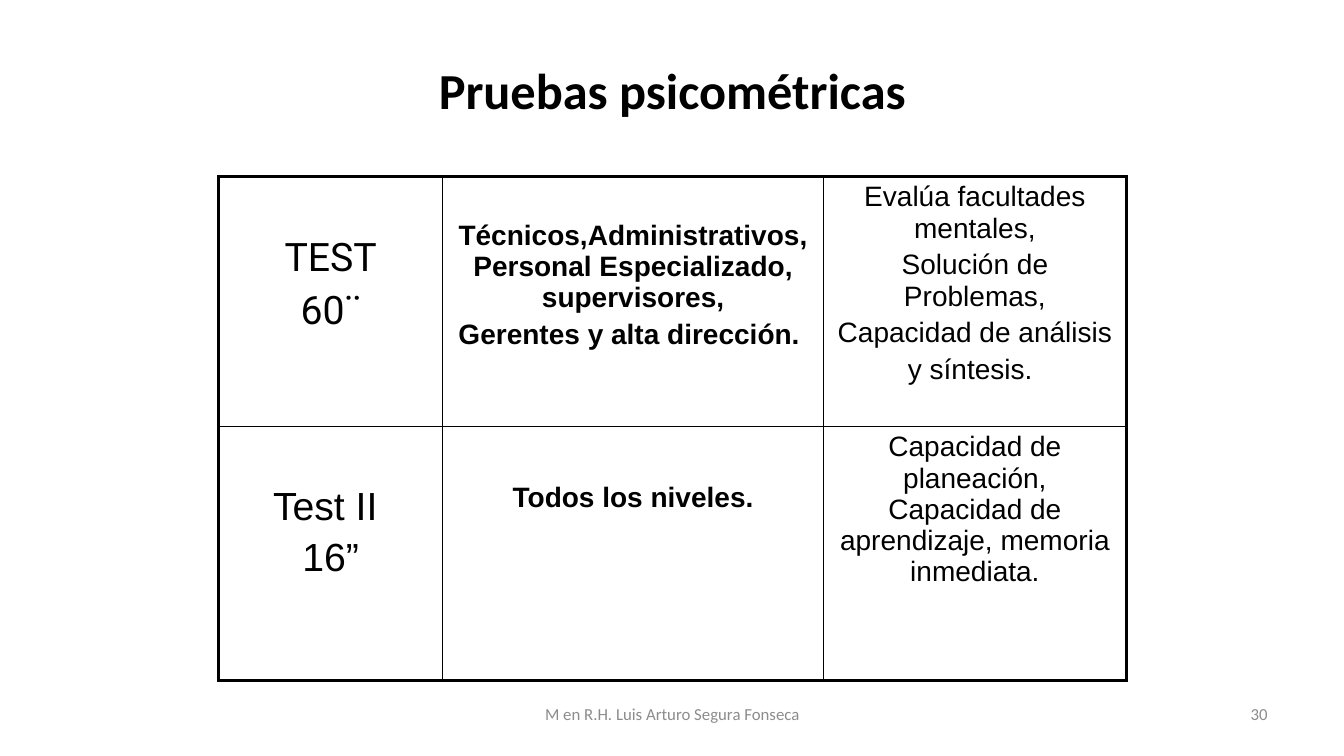
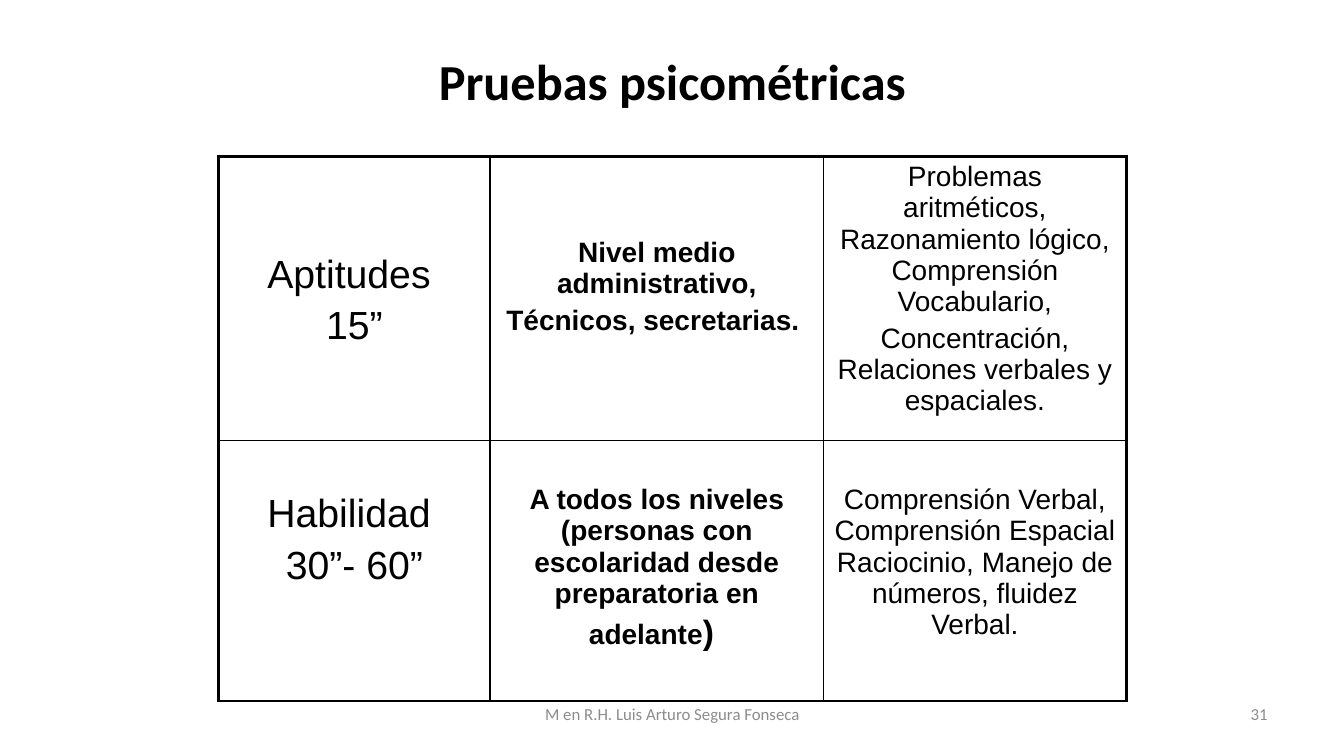
from lxml import etree
from pptx import Presentation
from pptx.dml.color import RGBColor
from pptx.enum.text import MSO_ANCHOR, PP_ALIGN
from pptx.oxml.ns import qn
from pptx.util import Inches, Pt

BLACK, GRAY = "000000", "8C8C8C"
TITLE = "Pruebas psicométricas"
AUTHOR = "M en R.H. Luis Arturo Segura Fonseca"
OUTER_LINE, INNER_LINE = 2.25, 1
# Size and weight of each table column
COLUMN_STYLES = [(28, False), (20, True), (20, False)]

# A cell is (top margin, paragraphs, optional font);
# a paragraph is a text or a list of (text, size, bold) spans
SLIDES = [
    dict(number=30, title_box=(0.67, 0.3, 12, 1.25), table_at=(2.17, 1.75),
         widths=[2.22, 3.78, 3], heights=[2.48, 2.52], rows=[
             [(0.58, ["TEST", "60¨"], "Roboto"),
              (0.43, ["Técnicos,Administrativos,Personal Especializado, supervisores,",
                      "Gerentes y alta dirección. "]),
              (0.05, ["Evalúa facultades mentales,", "Solución de Problemas,",
                      [("Capacidad de análisis y síntesis.", 20, False),
                       (" ", 24, False)]])],
             [(0.58, ["Test II ", "16”"]),
              (0.55, ["Todos los niveles."]),
              (0.05, ["Capacidad de planeación, Capacidad de aprendizaje, "
                      "memoria inmediata."])]]),
    dict(number=31, title_box=(2.17, 0.21, 9, 1.25), table_at=(2.17, 1.55),
         widths=[2.69, 3.31, 3], heights=[2.6, 2.58], rows=[
             [(0.96, ["Aptitudes ", "15”"]),
              (0.8, ["Nivel medio administrativo,", "Técnicos, secretarias. "]),
              (0.05, ["Problemas aritméticos, Razonamiento lógico, "
                      "Comprensión Vocabulario,",
                      "Concentración, Relaciones verbales y espaciales."])],
             [(0.51, ["Habilidad ", "30”- 60”"]),
              (0.43, [[("A todos los niveles (personas con escolaridad desde "
                        "preparatoria en adelante", 20, True),
                       (")", 24, True), (" ", 28, False)]]),
              (0.43, ["Comprensión Verbal, Comprensión Espacial Raciocinio, "
                      "Manejo de números, fluidez Verbal."])]]),
]


def color(value):
    return RGBColor.from_string(value)


def set_font(font, name, size, value=BLACK, bold=False):
    font.name, font.size, font.bold = name, Pt(size), bold
    font.color.rgb = color(value)


def add_title(page, box):
    title = page.shapes.title
    title.left, title.top, title.width, title.height = map(Inches, box)
    title.text_frame.text = TITLE
    title.text_frame.vertical_anchor = MSO_ANCHOR.MIDDLE
    para = title.text_frame.paragraphs[0]
    para.alignment, para.line_spacing = PP_ALIGN.CENTER, 0.9
    set_font(para.font, "Calibri", 36, bold=True)


def add_footer_text(page, left, width, text, alignment):
    box = page.shapes.add_textbox(Inches(left), Inches(6.83), Inches(width), Inches(0.5))
    frame = box.text_frame
    frame.word_wrap, frame.vertical_anchor = True, MSO_ANCHOR.MIDDLE
    para = frame.paragraphs[0]
    para.text, para.alignment = text, alignment
    set_font(para.font, "Calibri", 12, GRAY)


def set_borders(cell, widths):
    """Draw left, right, top and bottom borders, widths in points."""
    properties = cell._tc.get_or_add_tcPr()
    for index, (side, width) in enumerate(zip("LRTB", widths)):
        line = etree.Element(qn(f"a:ln{side}"), w=str(Pt(width)))
        fill = etree.SubElement(line, qn("a:solidFill"))
        etree.SubElement(fill, qn("a:srgbClr"), val=BLACK)
        properties.insert(index, line)


def fill_cell(cell, style, top_margin, paragraphs, font_name="Arial"):
    size, bold = style
    cell.fill.background()
    cell.margin_top = Inches(top_margin)
    frame = cell.text_frame
    for index, content in enumerate(paragraphs):
        para = frame.add_paragraph() if index else frame.paragraphs[0]
        para.alignment = PP_ALIGN.CENTER
        para.space_before = Pt(size * 0.2 if index else 0)
        if isinstance(content, str):
            para.text = content
            set_font(para.font, font_name, size, bold=bold)
            continue
        for text, span_size, span_bold in content:
            span = para.add_run()
            span.text = text
            set_font(span.font, font_name, span_size, bold=span_bold)


def add_tests_table(page, origin, widths, heights, rows):
    left, top = origin
    table = page.shapes.add_table(
        len(rows), len(widths), Inches(left), Inches(top),
        Inches(sum(widths)), Inches(sum(heights))).table
    table.first_row = table.horz_banding = False
    for column, width in zip(table.columns, widths):
        column.width = Inches(width)
    for row, height in zip(table.rows, heights):
        row.height = Inches(height)
    last_row, last_column = len(rows) - 1, len(widths) - 1
    for r, row in enumerate(rows):
        for c, content in enumerate(row):
            cell = table.cell(r, c)
            fill_cell(cell, COLUMN_STYLES[c], *content)
            on_edge = (c == 0, c == last_column, r == 0, r == last_row)
            set_borders(cell, [OUTER_LINE if edge else INNER_LINE for edge in on_edge])


def add_tests_slide(deck, number, title_box, table_at, widths, heights, rows):
    page = deck.slides.add_slide(deck.slide_layouts.get_by_name("Title Only"))
    add_footer_text(page, 4.56, 4.22, AUTHOR, PP_ALIGN.CENTER)
    add_footer_text(page, 9.56, 3.11, str(number), PP_ALIGN.RIGHT)
    add_title(page, title_box)
    add_tests_table(page, table_at, widths, heights, rows)


def main():
    deck = Presentation()
    deck.slide_width, deck.slide_height = Inches(13.33), Inches(7.5)
    for content in SLIDES:
        add_tests_slide(deck, **content)
    deck.save("out.pptx")


if __name__ == "__main__":
    main()
